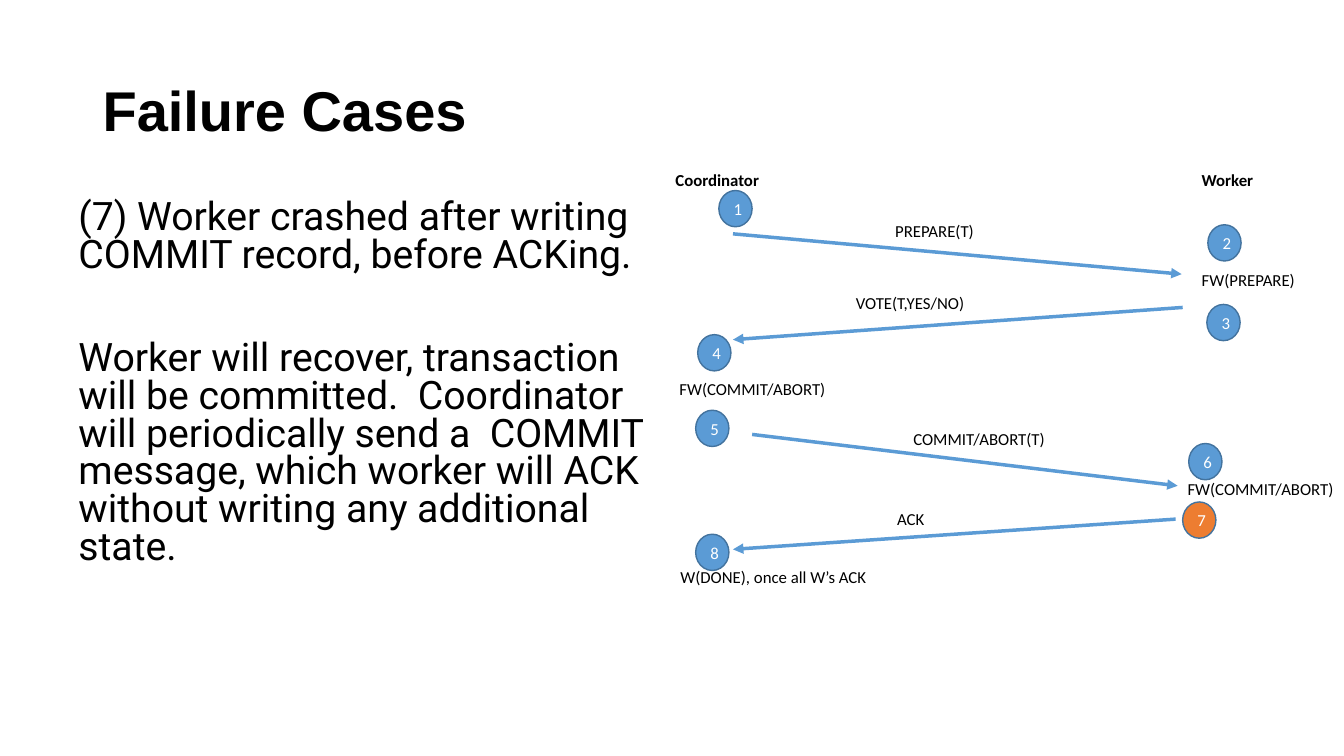
from lxml.etree import SubElement
from pptx import Presentation
from pptx.dml.color import RGBColor
from pptx.enum.shapes import MSO_CONNECTOR as Connector, MSO_SHAPE as Shape
from pptx.enum.text import MSO_ANCHOR as Anchor, PP_ALIGN as Align
from pptx.oxml.ns import qn
from pptx.util import Inches, Pt


def color(value):
    return RGBColor.from_string(value)


class ProtocolSlide:
    BLACK, WHITE = "000000", "FFFFFF"
    BLUE, ORANGE, OUTLINE = "5B9BD5", "ED7D31", "43739E"
    TITLE_FONT, BODY_FONT, LABEL_FONT = "Arial", "Roboto", "Calibri"
    LABEL_SIZE = 12
    STEP_WIDTH, STEP_HEIGHT = 0.33, 0.36

    def __init__(self, slide):
        self.slide = slide

    def style(self, paragraph, font, size, ink=BLACK, bold=False):
        for run in paragraph.runs:
            run.font.name = font
            run.font.size = Pt(size)
            run.font.bold = bold
            run.font.color.rgb = color(ink)

    def text_box(self, left, top, width, height):
        shape = self.slide.shapes.add_textbox(
            Inches(left), Inches(top), Inches(width), Inches(height))
        shape.text_frame.word_wrap = True
        return shape.text_frame

    def title(self, text, left, top, width, height):
        text_frame = self.text_box(left, top, width, height)
        text_frame.vertical_anchor = Anchor.MIDDLE
        text_frame.text = text
        paragraph = text_frame.paragraphs[0]
        paragraph.line_spacing = 0.9
        self.style(paragraph, self.TITLE_FONT, 40, bold=True)

    def body(self, entries, left, top, width, height):
        text_frame = self.text_box(left, top, width, height)
        text_frame.text = "\n".join(text for text, _ in entries)
        for paragraph, (_, space) in zip(text_frame.paragraphs, entries):
            paragraph.line_spacing = 0.8
            paragraph.space_before = Pt(space)
            self.style(paragraph, self.BODY_FONT, 28)

    def label(self, text, left, top, width, bold=False):
        text_frame = self.text_box(left, top, width, 0.3)
        text_frame.text = text
        self.style(text_frame.paragraphs[0], self.LABEL_FONT, self.LABEL_SIZE, bold=bold)

    def arrow(self, x1, y1, x2, y2):
        connector = self.slide.shapes.add_connector(
            Connector.STRAIGHT, Inches(x1), Inches(y1), Inches(x2), Inches(y2))
        connector.line.color.rgb = color(self.BLUE)
        connector.line.width = Pt(2.5)
        SubElement(connector.line._get_or_add_ln(), qn("a:tailEnd"), type="triangle")
        SubElement(connector._element.spPr, qn("a:effectLst"))

    def step(self, number, left, top, fill=BLUE):
        shape = self.slide.shapes.add_shape(
            Shape.OVAL, Inches(left), Inches(top),
            Inches(self.STEP_WIDTH), Inches(self.STEP_HEIGHT))
        shape.shadow.inherit = False
        shape.fill.solid()
        shape.fill.fore_color.rgb = color(fill)
        shape.line.color.rgb = color(self.OUTLINE)
        shape.line.width = Pt(1)
        text_frame = shape.text_frame
        text_frame.vertical_anchor = Anchor.MIDDLE
        text_frame.text = str(number)
        paragraph = text_frame.paragraphs[0]
        paragraph.alignment = Align.CENTER
        self.style(paragraph, self.LABEL_FONT, self.LABEL_SIZE, self.WHITE)


def main():
    presentation = Presentation()
    presentation.slide_width = Inches(13.33)
    presentation.slide_height = Inches(7.5)
    page = ProtocolSlide(presentation.slides.add_slide(presentation.slide_layouts[6]))

    # Title and explanation
    page.title("Failure Cases", 0.92, 0.4, 11.5, 1.45)
    page.body([
        ("(7) Worker crashed after writing COMMIT record, before ACKing.", 10),
        ("Worker will recover, transaction will be committed.  Coordinator will "
         "periodically send a  COMMIT message, which worker will ACK without "
         "writing any additional state.", 47),
    ], 0.68, 1.94, 6.08, 4.76)

    # Column headings
    page.label("Coordinator", 6.6, 1.63, 2.08, bold=True)
    page.label("Worker", 11.82, 1.63, 1.04, bold=True)

    # Messages between coordinator and worker
    for ends in [
        (7.27, 2.32, 11.72, 2.72),
        (11.73, 3.05, 7.27, 3.37),
        (7.46, 4.31, 11.68, 4.82),
        (11.66, 5.15, 7.27, 5.45),
    ]:
        page.arrow(*ends)

    # Message names and log writes
    for text, left, top, width in [
        ("PREPARE(T)", 8.78, 2.14, 2.04),
        ("FW(PREPARE)", 11.82, 2.63, 1.14),
        ("VOTE(T,YES/NO)", 8.39, 2.86, 2.04),
        ("FW(COMMIT/ABORT)", 6.64, 3.71, 2.04),
        ("COMMIT/ABORT(T)", 8.96, 4.2, 1.85),
        ("FW(COMMIT/ABORT)", 11.68, 4.7, 1.66),
        ("ACK", 8.8, 5, 1.85),
        ("W(DONE), once all W’s ACK", 6.65, 5.57, 2.49),
    ]:
        page.label(text, left, top, width)

    # Numbered steps, with the failing one highlighted
    failing_step = 7
    step_positions = [
        (7.13, 1.89), (11.98, 2.23), (11.97, 3.02), (6.92, 3.32),
        (6.9, 4.07), (11.79, 4.4), (11.73, 4.98), (6.9, 5.3),
    ]
    for number, (left, top) in enumerate(step_positions, start=1):
        page.step(number, left, top, page.ORANGE if number == failing_step else page.BLUE)

    presentation.save("out.pptx")


if __name__ == "__main__":
    main()
